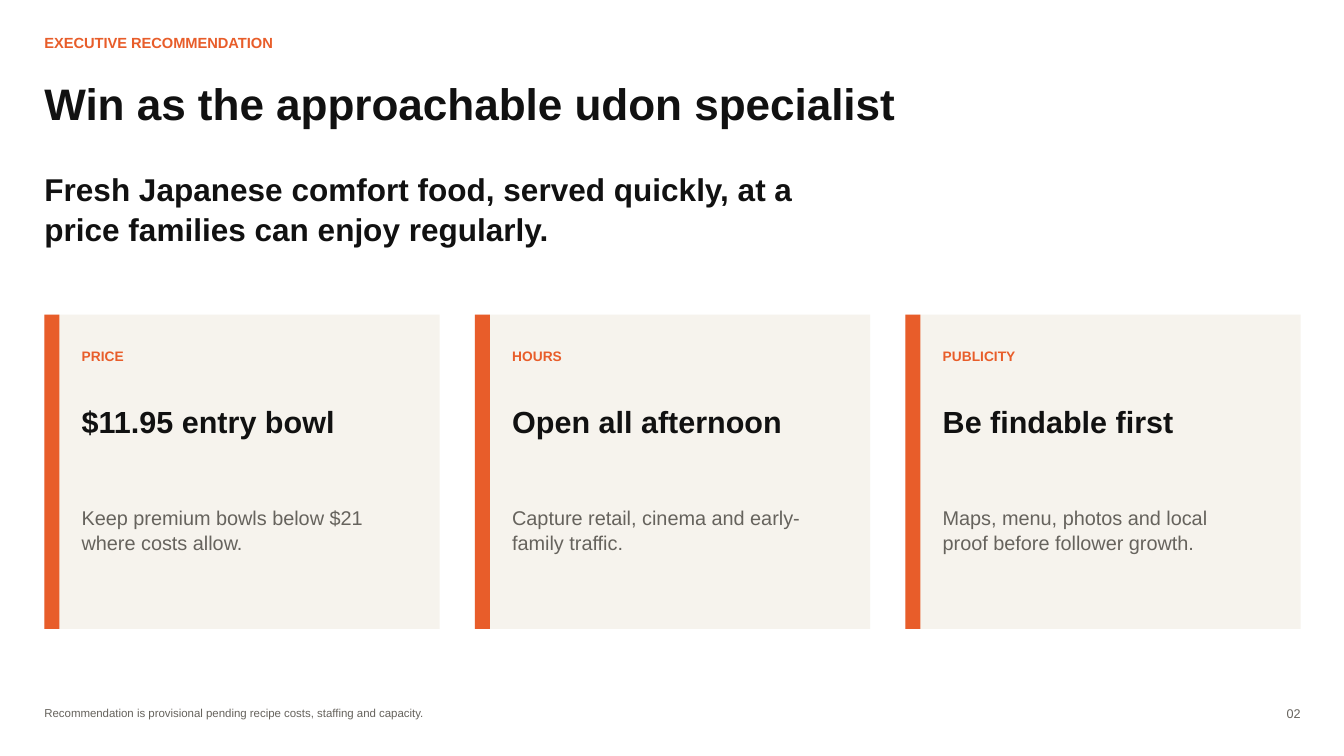
"""Build the executive recommendation slide."""
import dataclasses
import pptx
import pptx.dml.color
import pptx.enum.shapes
import pptx.enum.text
import pptx.util

Inches = pptx.util.Inches
Align = pptx.enum.text.PP_ALIGN


@dataclasses.dataclass(frozen=True)
class Theme:
    """Colours and type sizes of the slide."""
    font: str = "Arial"
    ink: str = "111111"
    grey: str = "66635D"
    accent: str = "E85D2A"
    panel: str = "F6F3ED"
    paper: str = "FFFFFF"
    title: float = 31.5
    lead: float = 22.5
    claim: float = 21.8
    body: float = 14.2
    kicker: float = 10.5
    label: float = 9.8
    number: float = 9
    note: float = 8.2
    leading: float = 1.05


class Page:
    """Draws styled elements on one slide."""

    def __init__(self, deck, theme):
        """Add a title-only slide with a plain ground."""
        self.theme = theme
        self.slide = deck.slides.add_slide(deck.slide_layouts[5])
        ground = self.slide.background.fill
        ground.solid()
        ground.fore_color.rgb = self.color(theme.paper)

    def color(self, value):
        """Turn a hex value into a colour."""
        return pptx.dml.color.RGBColor.from_string(value)

    def letter(self, shape, words, size, color, bold=False, align=Align.LEFT):
        """Fill a text shape with one styled run."""
        frame = shape.text_frame
        frame.word_wrap = True
        frame.auto_size = pptx.enum.text.MSO_AUTO_SIZE.NONE
        frame.vertical_anchor = pptx.enum.text.MSO_ANCHOR.TOP
        frame.margin_left = frame.margin_right = 0
        frame.margin_top = frame.margin_bottom = 0
        line = frame.paragraphs[0]
        line.alignment = align
        line.line_spacing = self.theme.leading
        run = line.add_run()
        run.text = words
        run.font.name = self.theme.font
        run.font.size = pptx.util.Pt(size)
        run.font.bold = bold
        run.font.color.rgb = self.color(color)

    def title(self, words, left, top, width, height):
        """Place and fill the title placeholder."""
        shape = self.slide.shapes.title
        shape.left, shape.top = Inches(left), Inches(top)
        shape.width, shape.height = Inches(width), Inches(height)
        self.letter(shape, words, self.theme.title, self.theme.ink, True)

    def text(self, words, left, top, width, height, size, color, **style):
        """Add a text box."""
        box = self.slide.shapes.add_textbox(
            Inches(left), Inches(top), Inches(width), Inches(height))
        self.letter(box, words, size, color, **style)

    def block(self, left, top, width, height, color):
        """Add a plain filled rectangle."""
        shape = self.slide.shapes.add_shape(
            pptx.enum.shapes.MSO_SHAPE.RECTANGLE,
            Inches(left), Inches(top), Inches(width), Inches(height))
        shape.shadow.inherit = False
        shape.fill.solid()
        shape.fill.fore_color.rgb = self.color(color)
        shape.line.fill.background()

    def card(self, left, label, claim, detail):
        """Add a panel with an accent bar and three texts."""
        look = self.theme
        top, height, inner = 3.12, 3.12, left + 0.37
        self.block(left, top, 3.92, height, look.panel)
        self.block(left, top, 0.15, height, look.accent)
        self.text(label, inner, 3.44, 3.02, 0.21, look.label, look.accent, bold=True)
        self.text(claim, inner, 3.98, 3.12, 0.67, look.claim, look.ink, bold=True)
        self.text(detail, inner, 5, 3.04, 0.85, look.body, look.grey)


def main():
    """Compose the slide and save it."""
    deck = pptx.Presentation()
    deck.slide_width, deck.slide_height = Inches(13.33), Inches(7.5)
    look = Theme()
    page = Page(deck, look)
    edge, pitch = 0.44, 4.27
    page.text("EXECUTIVE RECOMMENDATION", edge, 0.33, 3.65, 0.23,
              look.kicker, look.accent, bold=True)
    page.title("Win as the approachable udon specialist", edge, 0.73, 11.67, 0.75)
    page.text("02", 12.42, 7, 0.48, 0.19, look.number, look.grey, align=Align.RIGHT)
    page.text("Fresh Japanese comfort food, served quickly, at a price "
              "families can enjoy regularly.",
              edge, 1.67, 8.12, 0.85, look.lead, look.ink, bold=True)
    cards = [
        ("PRICE", "$11.95 entry bowl",
         "Keep premium bowls below $21 where costs allow."),
        ("HOURS", "Open all afternoon",
         "Capture retail, cinema and early-family traffic."),
        ("PUBLICITY", "Be findable first",
         "Maps, menu, photos and local proof before follower growth."),
    ]
    for index, words in enumerate(cards):
        page.card(edge + index * pitch, *words)
    page.text("Recommendation is provisional pending recipe costs, "
              "staffing and capacity.",
              edge, 7, 11.15, 0.19, look.note, look.grey)
    deck.save("out.pptx")


if __name__ == "__main__":
    main()
